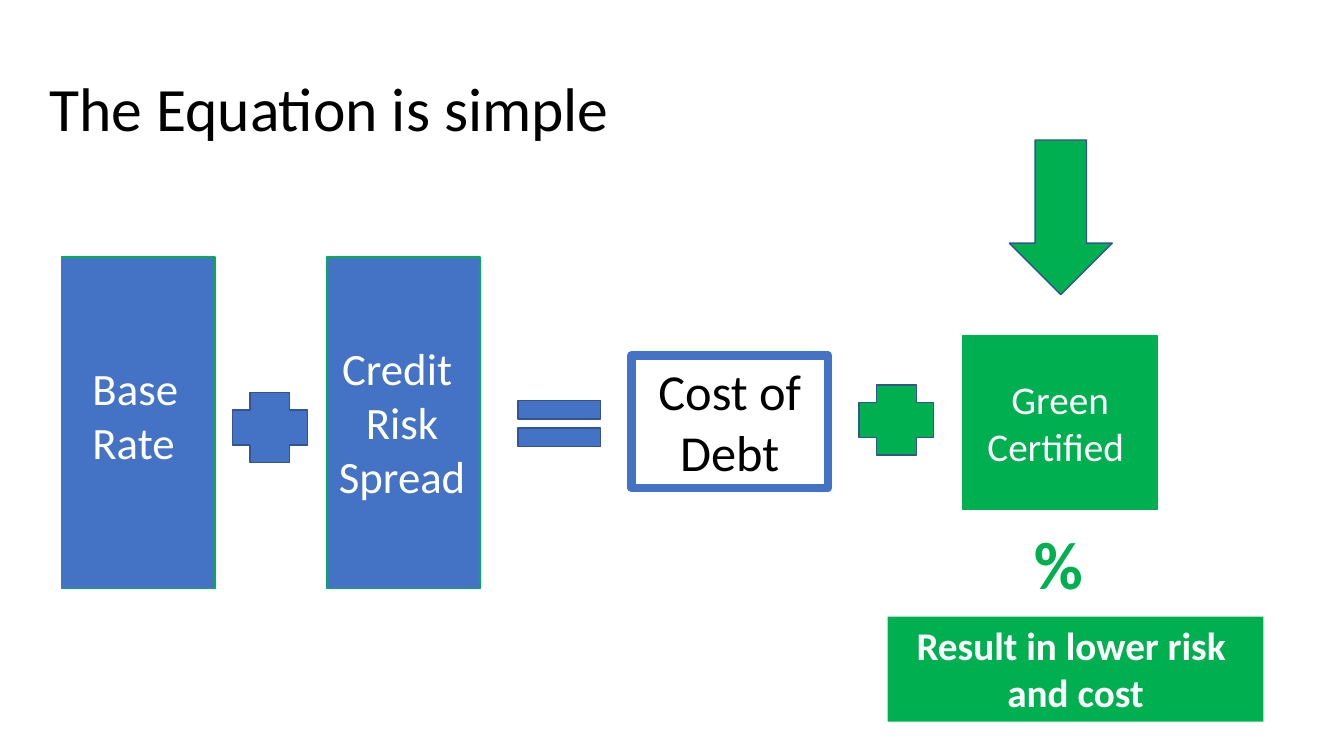
"""Build the slide that explains the cost of debt as a simple equation."""
import pptx
import pptx.dml.color
import pptx.enum.shapes
import pptx.enum.text
import pptx.util

SHAPE = pptx.enum.shapes.MSO_SHAPE
ALIGN = pptx.enum.text.PP_ALIGN
ANCHOR = pptx.enum.text.MSO_ANCHOR
FONT = "Calibri"
BLUE, GREEN, OUTLINE = "4472C4", "00B050", "325491"
WHITE, BLACK = "FFFFFF", "000000"

HEADING = "The Equation is simple"
HEADING_BOX = (28, 29, 840, 102)

TERM_TOP, TERM_WIDTH, TERM_HEIGHT = 183.5, 109.5, 237
TERM_LEFTS = (44, 233.5)
PLUS_SIZE = (53.5, 50)
PLUSES = [(166, 280.5, BLUE), (613.5, 275, GREEN)]
SIGNS = [(SHAPE.RECTANGLE, (left, TERM_TOP, TERM_WIDTH, TERM_HEIGHT), BLUE, GREEN)
         for left in TERM_LEFTS]
SIGNS += [(SHAPE.CROSS, (left, top, *PLUS_SIZE), color, OUTLINE)
          for left, top, color in PLUSES]
SIGNS += [
    (SHAPE.MATH_EQUAL, (359.5, 274.5, 80, 56), BLUE, OUTLINE),
    (SHAPE.DOWN_ARROW, (721, 100, 73.5, 110.5), GREEN, OUTLINE),
]

PANELS = [
    (["Cost of Debt"], (451, 254, 140.5, 94.5), None, BLUE, 6, 36, BLACK, False, ANCHOR.TOP),
    (["Green Certified "], (687.5, 240, 139.5, 123.5), GREEN, GREEN, 1, 28, WHITE, False,
     ANCHOR.MIDDLE),
    (["Result in lower risk ", "and cost"], (634, 440.5, 268.5, 75), GREEN, None, 0, 28, WHITE,
     True, ANCHOR.TOP),
]

LABELS = [
    (["Base", "Rate"], (59, 254, 92, 85), 32, WHITE, False, ALIGN.LEFT),
    (["Credit ", "Risk", "Spread"], (232.5, 240, 109.5, 124), 32, WHITE, False, ALIGN.CENTER),
    (["%"], (731.5, 369.5, 52.5, 65.5), 48, GREEN, True, ALIGN.LEFT),
]


def rgb(color):
    return pptx.dml.color.RGBColor.from_string(color)


def points(box):
    return [pptx.util.Pt(length) for length in box]


def write(frame, lines, size, color, bold=False, align=ALIGN.CENTER, anchor=ANCHOR.TOP):
    frame.word_wrap = True
    frame.vertical_anchor = anchor
    for index, line in enumerate(lines):
        paragraph = frame.add_paragraph() if index else frame.paragraphs[0]
        paragraph.alignment = align
        run = paragraph.add_run()
        run.text = line
        run.font.name = FONT
        run.font.size = pptx.util.Pt(size)
        run.font.bold = bold
        run.font.color.rgb = rgb(color)


def draw(slide, kind, box, fill, outline, weight=1):
    shape = slide.shapes.add_shape(kind, *points(box))
    shape.shadow.inherit = False
    for paint, color in ((shape.fill, fill), (shape.line.fill, outline)):
        if color:
            paint.solid()
            paint.fore_color.rgb = rgb(color)
        else:
            paint.background()
    if outline:
        shape.line.width = pptx.util.Pt(weight)
    return shape


def main():
    deck = pptx.Presentation()
    deck.slide_width, deck.slide_height = points((960, 540))
    slide = deck.slides.add_slide(deck.slide_layouts[5])

    heading = slide.shapes.title
    heading.left, heading.top, heading.width, heading.height = points(HEADING_BOX)
    write(heading.text_frame, [HEADING], 44, BLACK, align=ALIGN.LEFT, anchor=ANCHOR.MIDDLE)
    heading.text_frame.paragraphs[0].line_spacing = 0.9

    for kind, box, fill, outline in SIGNS:
        draw(slide, kind, box, fill, outline)
    for lines, box, fill, outline, weight, size, color, bold, anchor in PANELS:
        panel = draw(slide, SHAPE.RECTANGLE, box, fill, outline, weight)
        write(panel.text_frame, lines, size, color, bold, anchor=anchor)
    for lines, box, size, color, bold, align in LABELS:
        label = slide.shapes.add_textbox(*points(box))
        write(label.text_frame, lines, size, color, bold, align)

    deck.save("out.pptx")


if __name__ == "__main__":
    main()
